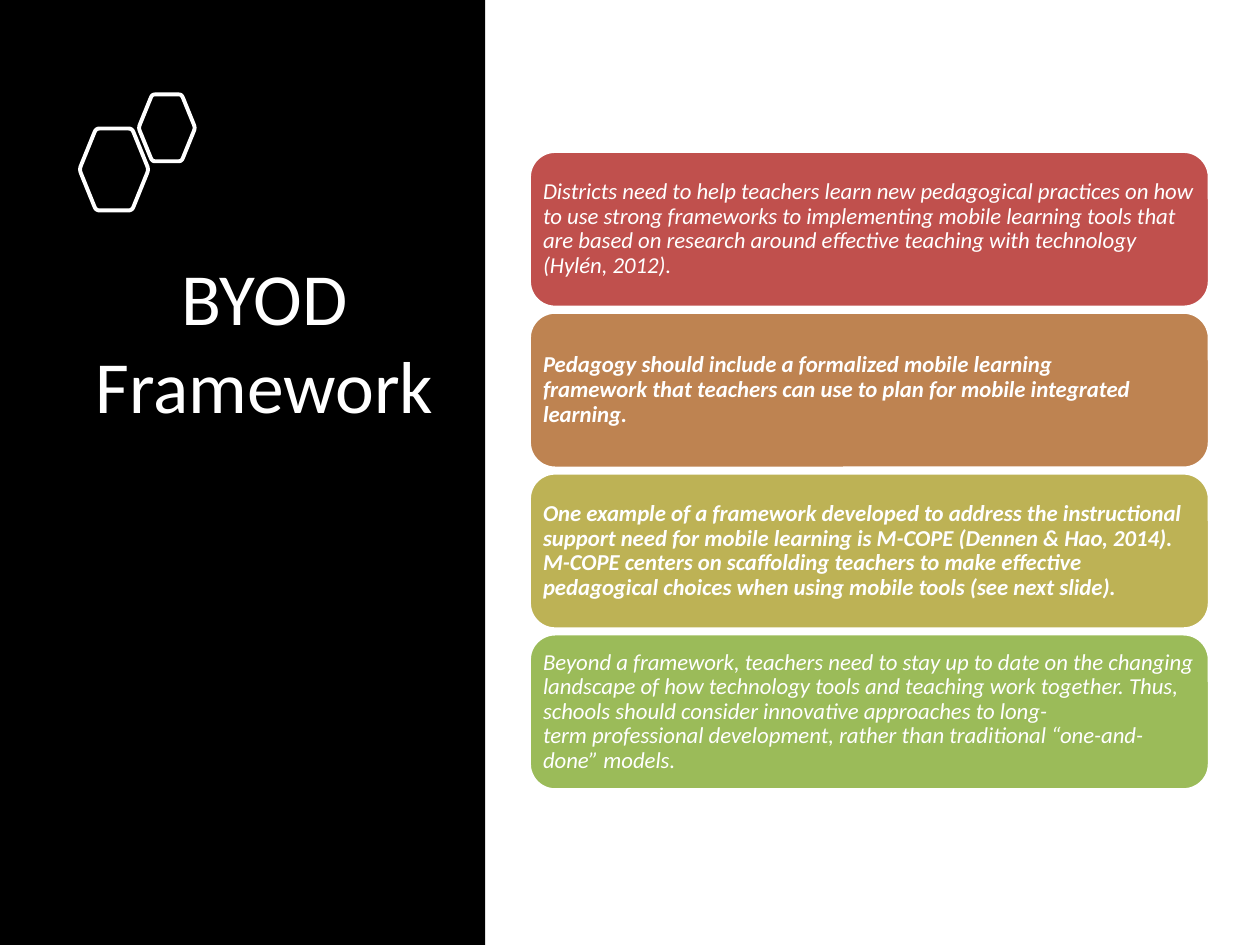
import dataclasses

import pptx
import pptx.dml.color
import pptx.enum.shapes
import pptx.enum.text
import pptx.util
from pptx.util import Inches


@dataclasses.dataclass(frozen=True)
class Theme:
    font: str = "Calibri"
    panel: str = "000000"
    light: str = "FFFFFF"
    cards: tuple = ("C0504D", "BE8351", "BDB255", "9BBB59")
    title_size: int = 42
    card_size: int = 13


theme = Theme()
rgb = pptx.dml.color.RGBColor.from_string


def style_text(text_frame, text, size, margins, anchor, alignment):
    text_frame.word_wrap = True
    text_frame.vertical_anchor = anchor
    text_frame.margin_left = text_frame.margin_right = Inches(margins[0])
    text_frame.margin_top = text_frame.margin_bottom = Inches(margins[1])
    paragraph = text_frame.paragraphs[0]
    paragraph.text = text
    paragraph.alignment = alignment
    paragraph.font.name = theme.font
    paragraph.font.size = pptx.util.Pt(size)
    paragraph.font.color.rgb = rgb(theme.light)
    return paragraph


def rounded_hexagon(left, top, width, height, cut=0.09, steps=4):
    """Return outline points as lengths, each corner a quadratic curve."""
    fractions = [(0, 0.5), (0.24, 0), (0.76, 0), (1, 0.5), (0.76, 1), (0.24, 1)]
    corners = [(left + x * width, top + y * height) for x, y in fractions]
    points = []
    for index, corner in enumerate(corners):
        before, after = corners[index - 1], corners[(index + 1) % len(corners)]
        start = [c + cut * (b - c) for c, b in zip(corner, before)]
        end = [c + cut * (a - c) for c, a in zip(corner, after)]
        for step in range(steps + 1):
            t = step / steps
            points.append(tuple(
                Inches((1 - t) ** 2 * s + 2 * t * (1 - t) * c + t ** 2 * e)
                for s, c, e in zip(start, corner, end)))
    return points


presentation = pptx.Presentation()
presentation.slide_width = Inches(10)
presentation.slide_height = Inches(7.5)
slide = presentation.slides.add_slide(presentation.slide_layouts[6])
shapes = slide.shapes
shape_types = pptx.enum.shapes.MSO_SHAPE
anchors = pptx.enum.text.MSO_ANCHOR
alignments = pptx.enum.text.PP_ALIGN

# Dark panel with the title
panel = shapes.add_shape(shape_types.RECTANGLE, 0, 0, Inches(3.85), Inches(7.5))
panel.shadow.inherit = False
panel.fill.solid()
panel.fill.fore_color.rgb = rgb(theme.panel)
panel.line.fill.background()

title = shapes.add_textbox(Inches(0.63), Inches(1.95), Inches(2.94), Inches(3.5))
style_text(title.text_frame, "BYOD Framework", theme.title_size, (0.1, 0.05),
           anchors.TOP, alignments.CENTER)

# Pair of hexagon outlines
for box in [(0.63, 1.02, 0.55, 0.65), (1.1, 0.75, 0.45, 0.53)]:
    points = rounded_hexagon(*box)
    builder = shapes.build_freeform(*points[0])
    builder.add_line_segments(points[1:], close=True)
    hexagon = builder.convert_to_shape()
    hexagon.shadow.inherit = False
    hexagon.fill.background()
    hexagon.line.color.rgb = rgb(theme.light)
    hexagon.line.width = pptx.util.Pt(2.25)

# Stack of cards: text, bold; "~" marks a no-break space
no_break_space = chr(160)
cards = [
    ("Districts need to help teachers learn new pedagogical practices on~how to use "
     "strong frameworks to implementing mobile learning~tools that are based on "
     "research around effective teaching~with~technology (Hylén, 2012).~", False),
    ("Pedagogy should include a formalized mobile learning framework~that teachers "
     "can use to plan for mobile integrated learning.~", True),
    ("One example of a framework developed to~address the~instructional support need "
     "for mobile learning is M-COPE (Dennen~& Hao, 2014). M-COPE centers on "
     "scaffolding teachers to make~effective pedagogical choices when using mobile "
     "tools (see next slide).", True),
    ("Beyond a framework, teachers need to stay up to date on the~changing landscape "
     "of how technology tools and teaching work~together. Thus, schools should "
     "consider innovative approaches to~long-term~professional development, rather "
     "than traditional “one-and-done” models.~", False),
]
first_top, last_top = 1.2, 5.03
pitch = (last_top - first_top) / (len(cards) - 1)
for index, ((text, bold), color) in enumerate(zip(cards, theme.cards)):
    card = shapes.add_shape(shape_types.ROUNDED_RECTANGLE, Inches(4.2),
                            Inches(first_top + index * pitch), Inches(5.4), Inches(1.24))
    card.shadow.inherit = False
    card.fill.solid()
    card.fill.fore_color.rgb = rgb(color)
    card.line.color.rgb = rgb(theme.light)
    card.line.width = pptx.util.Pt(2)
    paragraph = style_text(card.text_frame, text.replace("~", no_break_space),
                           theme.card_size, (0.05, 0.05),
                           anchors.MIDDLE, alignments.LEFT)
    paragraph.line_spacing = 0.9
    paragraph.space_after = pptx.util.Pt(4.55)
    paragraph.font.italic = True
    paragraph.font.bold = bold

presentation.save("out.pptx")
